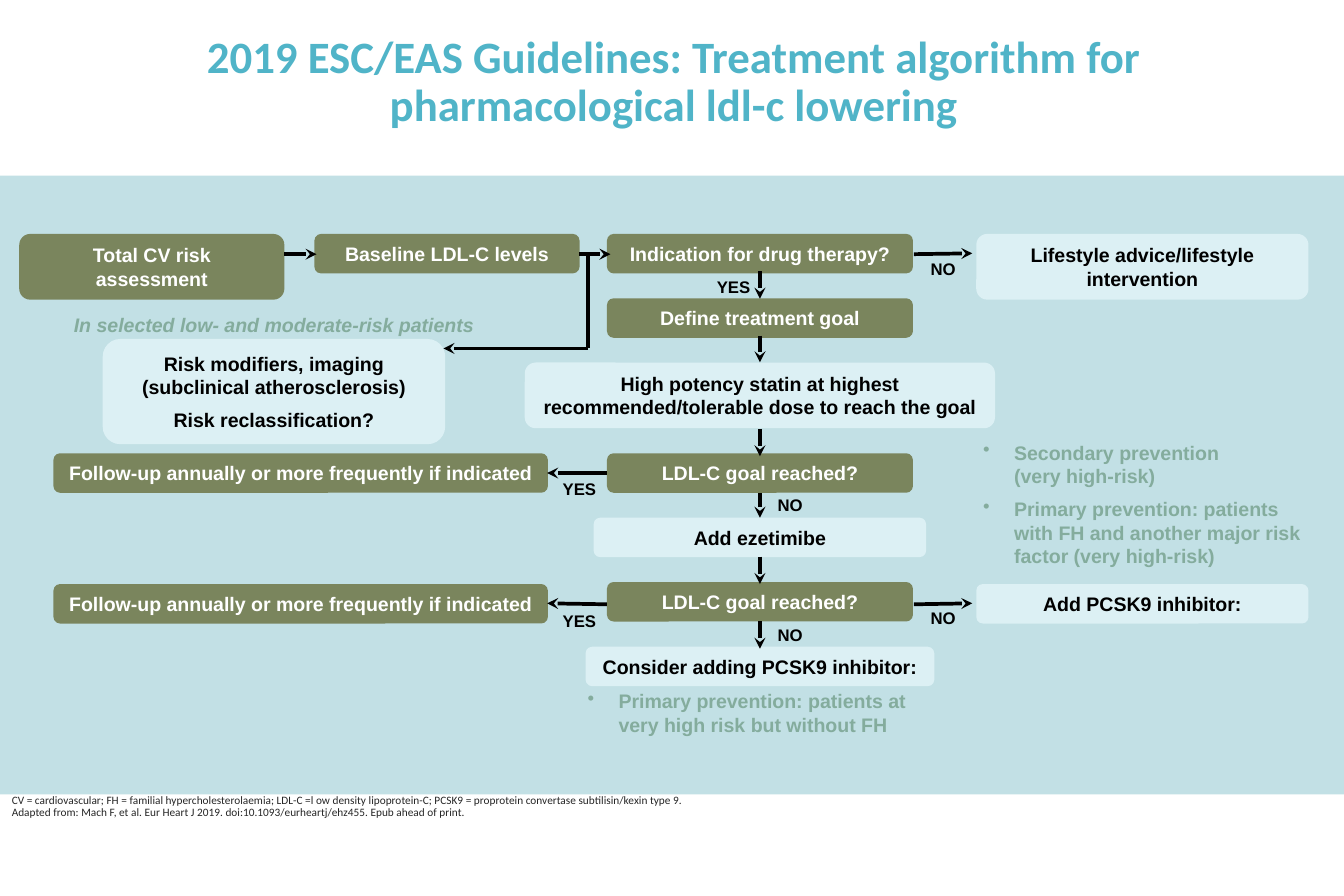
from dataclasses import dataclass

from lxml.etree import SubElement
from pptx import Presentation
from pptx.dml.color import RGBColor
from pptx.enum.shapes import MSO_CONNECTOR, MSO_SHAPE
from pptx.enum.text import MSO_ANCHOR, PP_ALIGN
from pptx.oxml.ns import qn
from pptx.util import Pt


@dataclass(frozen=True)
class Theme:
    heading_font: str = "Calibri"
    body_font: str = "Arial"
    title_size: float = 27
    box_size: float = 11.8
    label_size: float = 10.1
    footnote_size: float = 6.8
    title: str = "50B4C8"
    panel: str = "C2E0E5"
    step: str = "7A855D"
    action: str = "DCF0F4"
    note: str = "84AC9D"
    footnote: str = "262626"
    black: str = "000000"
    white: str = "FFFFFF"


THEME = Theme()
AXIS = 458  # centre of the main column
LINE_HEIGHT = 23.8  # height of a one-line box
TWO_LINES = 39.6  # height of a two-line box
STEP_WIDTH = 184.4
FOLLOW_UP = "Follow-up annually or more frequently if indicated"


def write(shape, paragraphs, color, size, font=THEME.body_font, bold=True, italic=False,
          align=PP_ALIGN.CENTER, anchor=MSO_ANCHOR.MIDDLE, inset=5, spacing=None):
    frame = shape.text_frame
    frame.word_wrap = True
    frame.vertical_anchor = anchor
    frame.margin_left = frame.margin_right = Pt(inset)
    frame.margin_top = frame.margin_bottom = Pt(3.6)
    for index, text in enumerate(paragraphs):
        paragraph = frame.add_paragraph() if index else frame.paragraphs[0]
        paragraph.text = text
        paragraph.alignment = align
        paragraph.space_before = Pt(size / 2 if index else 0)
        if spacing:
            paragraph.line_spacing = spacing
        paragraph.font.name = font
        paragraph.font.size = Pt(size)
        paragraph.font.bold = bold
        paragraph.font.italic = italic
        paragraph.font.color.rgb = RGBColor.from_string(color)


def add_panel(slide, kind, left, top, width, height, fill):
    shape = slide.shapes.add_shape(kind, Pt(left), Pt(top), Pt(width), Pt(height))
    shape.shadow.inherit = False
    shape.fill.solid()
    shape.fill.fore_color.rgb = RGBColor.from_string(fill)
    shape.line.fill.background()
    return shape


def add_box(slide, paragraphs, left, top, width, height, fill, inset=5):
    shape = add_panel(slide, MSO_SHAPE.ROUNDED_RECTANGLE, left, top, width, height, fill)
    color = THEME.white if fill == THEME.step else THEME.black
    write(shape, paragraphs, color, THEME.box_size, inset=inset)


def add_text(slide, paragraphs, left, top, width, height, color, size, **style):
    shape = slide.shapes.add_textbox(Pt(left), Pt(top), Pt(width), Pt(height))
    write(shape, paragraphs, color, size, **style)
    return shape


def add_bullets(slide, items, left, top, width, height):
    shape = add_text(slide, items, left, top, width, height, THEME.note, THEME.box_size,
                     align=PP_ALIGN.LEFT, anchor=MSO_ANCHOR.TOP, inset=7.2)
    for paragraph in shape.text_frame.paragraphs:
        properties = paragraph._p.get_or_add_pPr()
        properties.set("marL", str(Pt(18.7)))
        properties.set("indent", str(-Pt(18.7)))
        bullet = properties.makeelement(qn("a:buChar"), {"char": "•"})
        properties.insert_element_before(bullet, "a:tabLst", "a:defRPr", "a:extLst")


def add_line(slide, x1, y1, x2, y2, arrow=True):
    connector = slide.shapes.add_connector(
        MSO_CONNECTOR.STRAIGHT, Pt(x1), Pt(y1), Pt(x2), Pt(y2))
    connector.line.width = Pt(2.25)
    connector.line.color.rgb = RGBColor.from_string(THEME.black)
    if arrow:
        SubElement(connector.line._get_or_add_ln(), qn("a:tailEnd"), type="stealth")
    SubElement(connector._element.spPr, qn("a:effectLst"))


def add_title(slide, text):
    title = slide.shapes.title
    title.left, title.top, title.width, title.height = Pt(33), Pt(16.5), Pt(746), Pt(66.3)
    write(title, [text], THEME.title, THEME.title_size, THEME.heading_font,
          anchor=MSO_ANCHOR.BOTTOM, inset=7.2, spacing=0.9)


def add_boxes(slide):
    # Main column, centred on one axis
    for text, top, width, height, fill in [
        ("Indication for drug therapy?", 141, STEP_WIDTH, LINE_HEIGHT, THEME.step),
        ("Define treatment goal", 179.8, STEP_WIDTH, LINE_HEIGHT, THEME.step),
        ("High potency statin at highest recommended/tolerable dose to reach the goal",
         218.5, 283.4, TWO_LINES, THEME.action),
        ("LDL-C goal reached?", 273.2, STEP_WIDTH, LINE_HEIGHT, THEME.step),
        ("Add ezetimibe", 312, 200.4, LINE_HEIGHT, THEME.action),
        ("LDL-C goal reached?", 350.8, STEP_WIDTH, LINE_HEIGHT, THEME.step),
        ("Consider adding PCSK9 inhibitor:", 389.8, 210.2, LINE_HEIGHT, THEME.action),
    ]:
        add_box(slide, [text], AXIS - width / 2, top, width, height, fill)

    # Side branches
    add_box(slide, ["Total CV risk assessment"], 11.6, 141, 159.8, TWO_LINES, THEME.step, 12)
    add_box(slide, ["Baseline LDL-C levels"], 189.5, 141, 159.8, LINE_HEIGHT, THEME.step)
    add_box(slide, ["Risk modifiers, imaging (subclinical atherosclerosis)",
                    "Risk reclassification?"], 61.9, 204.3, 206.4, 63.4, THEME.action)
    for top in (273.2, 352):
        add_box(slide, [FOLLOW_UP], 32.2, top, 298, LINE_HEIGHT, THEME.step)
    for text, top, height in [("Lifestyle advice/lifestyle intervention", 141, TWO_LINES),
                              ("Add PCSK9 inhibitor:", 352, LINE_HEIGHT)]:
        add_box(slide, [text], 588.4, top, 200.2, height, THEME.action)


def add_arrows(slide):
    # Down the main column
    for start, end in [(163.4, 180), (202.3, 218.4), (258.5, 275),
                       (297.4, 312), (335.5, 352), (374.4, 391)]:
        add_line(slide, AXIS, start, AXIS, end)
    # Across the rows
    for x1, y1, x2, y2 in [
        (171.4, 153.2, 190.8, 153.2), (349.2, 153.2, 367.9, 153.2),
        (550.8, 153.2, 586, 152.7), (365.8, 285.1, 329.8, 285.1),
        (365.8, 364.2, 329.8, 363.6), (550.8, 364.2, 586, 363.6),
    ]:
        add_line(slide, x1, y1, x2, y2)
    # Detour to the risk modifiers
    add_line(slide, 354.3, 153.2, 354.3, 210, arrow=False)
    add_line(slide, 354.3, 210, 267.3, 210)


def add_labels(slide):
    for text, width, places in [
        ("YES", 44.6, [(419.8, 163.4), (326.9, 285.1), (326.9, 364.3)]),
        ("NO", 35.3, [(550.8, 152.2), (550.8, 362.7), (458.6, 294.5), (458.6, 372.8)]),
    ]:
        for left, top in places:
            add_text(slide, [text], left, top, width, 19.4, THEME.black, THEME.label_size)


def add_notes(slide):
    add_text(slide, ["In selected low- and moderate-risk patients"], 33, 183.6, 264.2,
             LINE_HEIGHT, THEME.note, THEME.box_size, italic=True)
    add_bullets(slide, ["Secondary prevention\n(very high-risk)",
                        "Primary prevention: patients with FH and another major risk "
                        "factor (very high-risk)"], 585.4, 262, 210.2, 85.7)
    add_bullets(slide, ["Primary prevention: patients at very high risk but without FH"],
                347, 411.8, 221.8, 36)
    add_text(slide, ["CV = cardiovascular; FH = familial hypercholesterolaemia; "
                     "LDL-C =l ow density lipoprotein-C; "
                     "PCSK9 = proprotein convertase subtilisin/kexin type 9.\n"
                     "Adapted from: Mach F, et al. Eur Heart J 2019. "
                     "doi:10.1093/eurheartj/ehz455. Epub ahead of print."],
             0, 472.3, 483, 24.5, THEME.footnote, THEME.footnote_size,
             font=THEME.heading_font, bold=False, align=PP_ALIGN.LEFT,
             anchor=MSO_ANCHOR.BOTTOM, inset=7.2, spacing=0.85)


def main():
    presentation = Presentation()
    presentation.slide_width, presentation.slide_height = Pt(810), Pt(540)
    slide = presentation.slides.add_slide(presentation.slide_layouts[5])
    add_panel(slide, MSO_SHAPE.RECTANGLE, 0, 105.8, 810, 373, THEME.panel)
    add_title(slide, "2019 ESC/EAS Guidelines: Treatment algorithm for "
                     "pharmacological ldl-c lowering")
    add_boxes(slide)
    add_arrows(slide)
    add_labels(slide)
    add_notes(slide)
    presentation.save("out.pptx")


if __name__ == "__main__":
    main()
